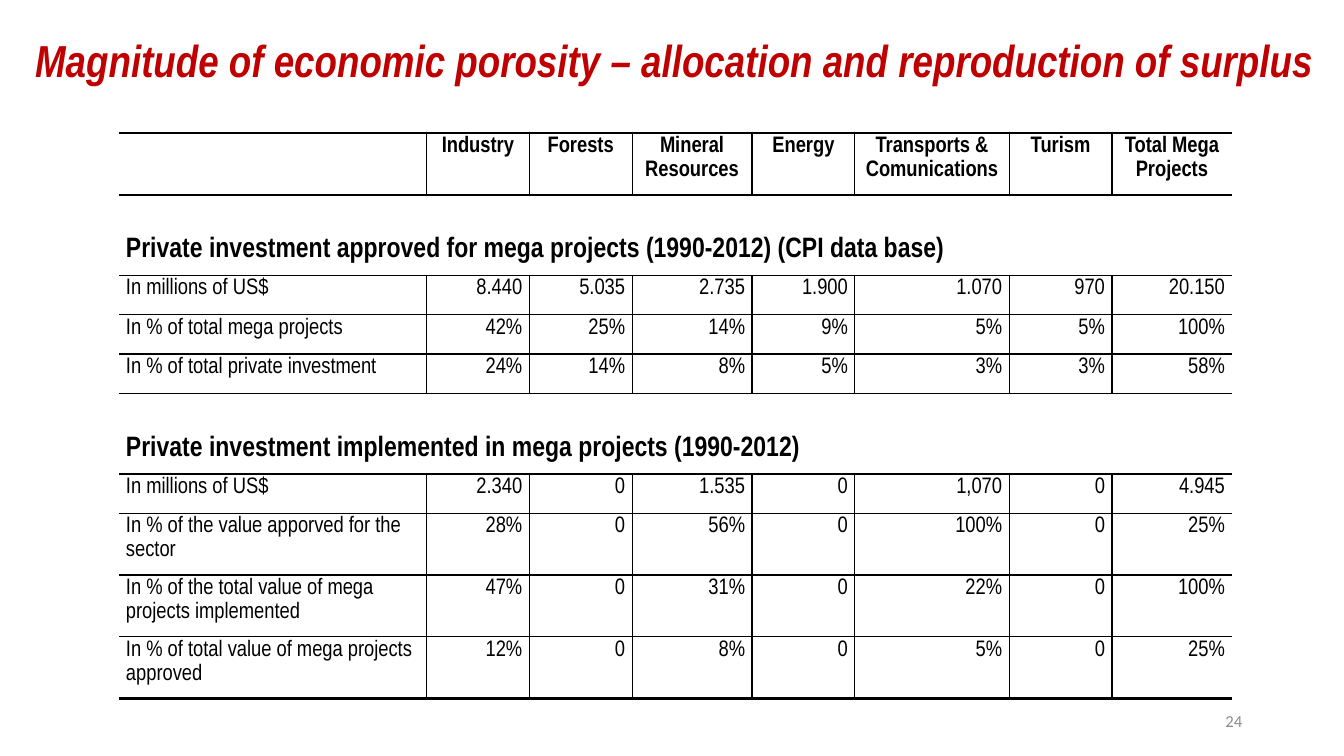
from lxml.etree import SubElement
from pptx import Presentation
from pptx.dml.color import RGBColor
from pptx.enum.text import MSO_ANCHOR, PP_ALIGN
from pptx.oxml.ns import qn
from pptx.util import Inches, Pt

RED = RGBColor(0xC0, 0x00, 0x00)
BLACK = RGBColor(0x00, 0x00, 0x00)
GRAY = RGBColor(0x8C, 0x8C, 0x8C)
NARROW = "Arial Narrow"

TITLE = "Magnitude of economic porosity – allocation and reproduction of surplus"
COLUMN_WIDTHS = [3.05, 1.02, 1.02, 1.19, 1.02, 1.53, 1.02, 1.19]
ROW_HEIGHTS = [0.58, 0.8, 0.39, 0.39, 0.39, 0.8, 0.39, 0.58, 0.58, 0.58]
INVESTMENT = [
    ["", "Industry", "Forests", "Mineral Resources", "Energy",
     "Transports & Comunications", "Turism", "Total Mega Projects"],
    ["Private investment approved for mega projects (1990-2012) (CPI data base)"],
    ["In millions of US$", "8.440", "5.035", "2.735", "1.900", "1.070", "970", "20.150"],
    ["In % of total mega projects", "42%", "25%", "14%", "9%", "5%", "5%", "100%"],
    ["In % of total private investment", "24%", "14%", "8%", "5%", "3%", "3%", "58%"],
    ["Private investment implemented in mega projects (1990-2012)"],
    ["In millions of US$", "2.340", "0", "1.535", "0", "1,070", "0", "4.945"],
    ["In % of the value apporved for the sector",
     "28%", "0", "56%", "0", "100%", "0", "25%"],
    ["In % of the total value of mega projects implemented",
     "47%", "0", "31%", "0", "22%", "0", "100%"],
    ["In % of total value of mega projects approved",
     "12%", "0", "8%", "0", "5%", "0", "25%"],
]
RULE_WEIGHTS = [2.25, 1.5] + [1] * 8 + [2.25]

TITLE_FONT = {"name": NARROW, "size": Pt(32), "bold": True, "italic": True}
NUMBER_FONT = {"name": "Calibri", "size": Pt(12)}
HEADER_FONT = {"name": NARROW, "size": Pt(16), "bold": True}
SECTION_FONT = {"name": NARROW, "size": Pt(20), "bold": True}
BODY_FONT = {"name": NARROW, "size": Pt(16), "bold": False}
HEADING_SPACING = {"line_spacing": 1.15, "space_before": Pt(6)}
BODY_SPACING = {"line_spacing": 1.15, "space_before": Pt(2), "space_after": Pt(2)}
CELL_MARGINS = {"margin_left": Inches(0.07), "margin_right": Inches(0.07),
                "margin_top": 0, "margin_bottom": 0}
SECTION_POSITION = {"vertical_anchor": MSO_ANCHOR.BOTTOM,
                    "margin_bottom": Inches(0.12)}


def apply(target, values):
    for attribute, value in values.items():
        setattr(target, attribute, value)


def write(frame, text, font, color, paragraph_format):
    paragraph = frame.paragraphs[0]
    apply(paragraph, paragraph_format)
    run = paragraph.add_run()
    run.text = text
    apply(run.font, font)
    run.font.color.rgb = color


def add_text(slide, bounds, text, font, color, paragraph_format):
    frame = slide.shapes.add_textbox(*map(Inches, bounds)).text_frame
    apply(frame, {"word_wrap": True, "vertical_anchor": MSO_ANCHOR.MIDDLE})
    write(frame, text, font, color, paragraph_format)


def set_borders(cell, weights):
    properties = cell._tc.get_or_add_tcPr()
    for side, weight in weights.items():
        line = SubElement(properties, qn(f"a:ln{side}"), w=str(Pt(weight)))
        if weight:
            fill = SubElement(line, qn("a:solidFill"))
            SubElement(fill, qn("a:srgbClr"), val=str(BLACK))
        else:
            SubElement(line, qn("a:noFill"))


def fill_cell(cell, text, row, column, is_section):
    set_borders(cell, {
        "L": 0 if is_section or column == 0 else 1,
        "R": 0 if is_section or column == len(COLUMN_WIDTHS) - 1 else 1,
        "T": RULE_WEIGHTS[row],
        "B": RULE_WEIGHTS[row + 1],
    })
    cell.fill.background()
    apply(cell, CELL_MARGINS)
    if is_section:
        apply(cell, SECTION_POSITION)
        font, spacing, alignment = SECTION_FONT, HEADING_SPACING, PP_ALIGN.LEFT
    elif row == 0:
        font, spacing, alignment = HEADER_FONT, HEADING_SPACING, PP_ALIGN.CENTER
    else:
        font, spacing = BODY_FONT, BODY_SPACING
        alignment = PP_ALIGN.RIGHT if column else PP_ALIGN.LEFT
    if text:
        write(cell.text_frame, text, font, BLACK, {"alignment": alignment, **spacing})


def add_investment_table(slide):
    bounds = (1.18, 1.32, sum(COLUMN_WIDTHS), sum(ROW_HEIGHTS))
    table = slide.shapes.add_table(
        len(ROW_HEIGHTS), len(COLUMN_WIDTHS), *map(Inches, bounds)).table
    apply(table, {"first_row": False, "horz_banding": False})
    for column, width in zip(table.columns, COLUMN_WIDTHS):
        column.width = Inches(width)
    for row, (height, texts) in enumerate(zip(ROW_HEIGHTS, INVESTMENT)):
        table.rows[row].height = Inches(height)
        is_section = len(texts) == 1
        for column in range(len(COLUMN_WIDTHS)):
            text = texts[column] if column < len(texts) else ""
            fill_cell(table.cell(row, column), text, row, column, is_section)
        if is_section:
            table.cell(row, 0).merge(table.cell(row, len(COLUMN_WIDTHS) - 1))


def main():
    presentation = Presentation()
    apply(presentation, {"slide_width": Inches(13.33), "slide_height": Inches(7.5)})
    slide = presentation.slides.add_slide(presentation.slide_layouts[6])
    add_text(slide, (0.25, 0.2, 12.89, 0.85), TITLE, TITLE_FONT, RED,
             {"line_spacing": 0.9})
    add_investment_table(slide)
    add_text(slide, (9.42, 6.95, 3, 0.4), "24", NUMBER_FONT, GRAY,
             {"alignment": PP_ALIGN.RIGHT})
    presentation.save("out.pptx")


if __name__ == "__main__":
    main()
